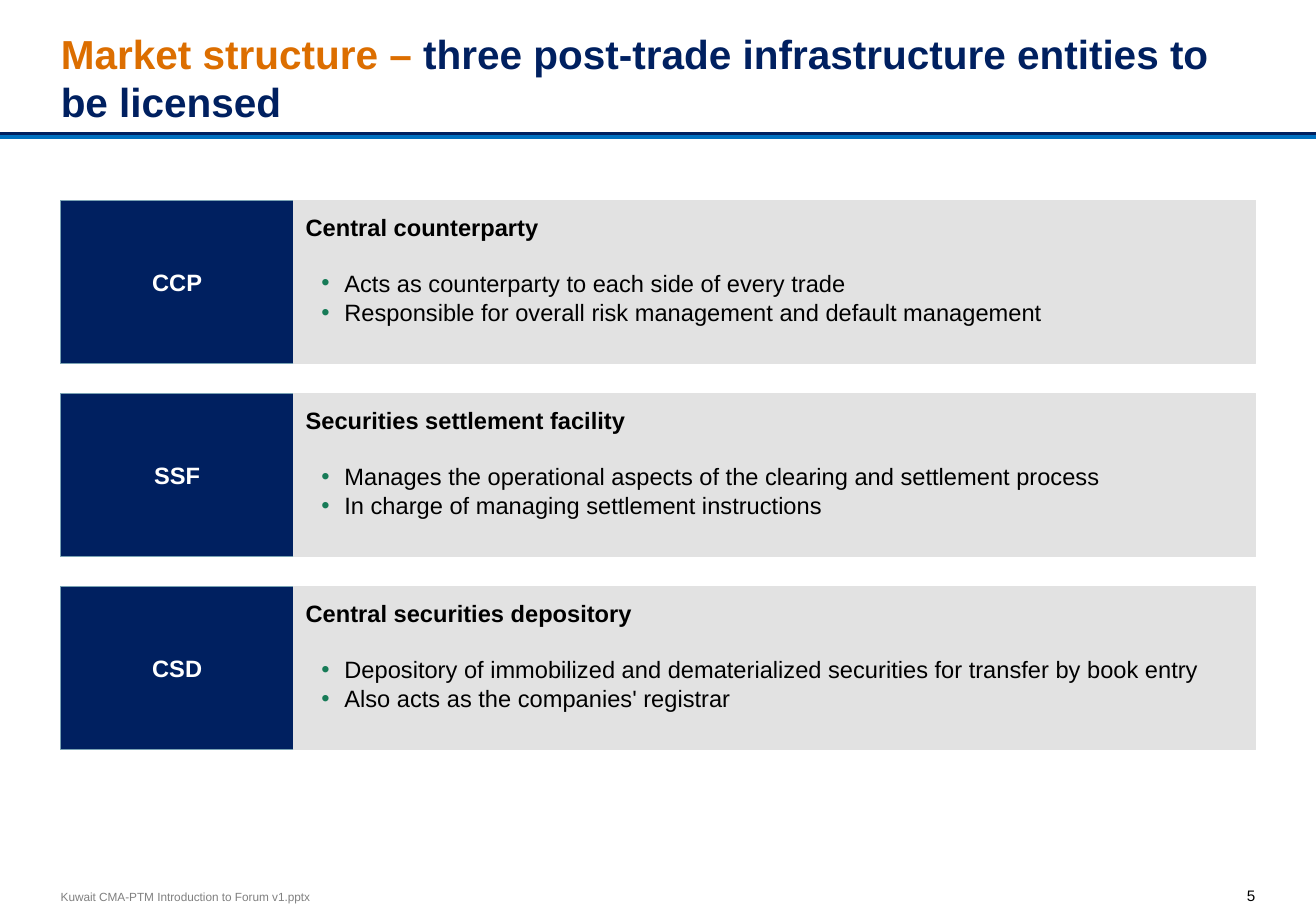
import dataclasses

import lxml.etree
import pptx
import pptx.dml.color
import pptx.enum.shapes
import pptx.enum.text
import pptx.oxml
import pptx.oxml.ns
import pptx.util

Cm = pptx.util.Cm
Pt = pptx.util.Pt
ALIGN = pptx.enum.text.PP_ALIGN
ANCHOR = pptx.enum.text.MSO_ANCHOR


@dataclasses.dataclass(frozen=True)
class Theme:
    font: str = "Arial"
    navy: str = "002060"
    blue: str = "0070C0"
    orange: str = "DC6E00"
    panel: str = "E2E2E2"
    edge: str = "79A2B3"
    bullet: str = "177B57"
    black: str = "000000"
    white: str = "FFFFFF"
    gray: str = "808080"
    title_size: int = 24
    body_size: int = 14
    number_size: int = 9
    footer_size: int = 7


theme = Theme()


def rgb(value):
    return pptx.dml.color.RGBColor.from_string(value)


def write(para, text, size=theme.body_size, color=theme.black, bold=False,
          align=ALIGN.LEFT, bullet=False, before=0):
    para.alignment = align
    if bullet:
        properties = para._p.get_or_add_pPr()
        properties.set("marL", str(Cm(0.81)))
        properties.set("indent", str(-Cm(0.48)))
        mark_color = lxml.etree.SubElement(properties, pptx.oxml.ns.qn("a:buClr"))
        lxml.etree.SubElement(mark_color, pptx.oxml.ns.qn("a:srgbClr"), val=theme.bullet)
        lxml.etree.SubElement(properties, pptx.oxml.ns.qn("a:buFont"), typeface=theme.font)
        lxml.etree.SubElement(properties, pptx.oxml.ns.qn("a:buChar"), char="•")
        para.level = 1
    if before:
        para.space_before = Pt(before)
    span = para.add_run()
    span.text = text
    span.font.name = theme.font
    span.font.size = Pt(size)
    span.font.bold = bold
    span.font.color.rgb = rgb(color)


deck = pptx.Presentation()
deck.slide_width = Cm(27.51)
deck.slide_height = Cm(19.05)
page = deck.slides.add_slide(deck.slide_layouts[5])

left = 1.27
label_width = 4.87
panel_width = 20.11
row_top = 4.19
row_height = 3.41
row_pitch = 4.04

rule = page.shapes.add_connector(
    pptx.enum.shapes.MSO_CONNECTOR.STRAIGHT, Cm(0), Cm(2.79), deck.slide_width, Cm(2.79))
rule.line.color.rgb = rgb(theme.navy)
rule.line.width = Pt(2.25)
effects = lxml.etree.SubElement(rule._element.spPr, pptx.oxml.ns.qn("a:effectLst"))
shadow = lxml.etree.SubElement(
    effects, pptx.oxml.ns.qn("a:outerShdw"), dist=str(Pt(2)), dir="5400000",
    algn="ctr", rotWithShape="0")
lxml.etree.SubElement(shadow, pptx.oxml.ns.qn("a:srgbClr"), val=theme.blue)

title = page.shapes.title
title.left, title.top = Cm(left), Cm(0.45)
title.width, title.height = Cm(24.97), Cm(2.31)
frame = title.text_frame
frame.auto_size = pptx.enum.text.MSO_AUTO_SIZE.NONE
frame.word_wrap = True
frame.vertical_anchor = ANCHOR.BOTTOM
frame.margin_left = frame.margin_right = 0
frame.margin_top = frame.margin_bottom = Cm(0.13)
for text, color in [
    ("Market structure –", theme.orange),
    (" three post-trade infrastructure entities to be licensed", theme.navy),
]:
    write(frame.paragraphs[0], text, size=theme.title_size, color=color, bold=True)

entities = [
    ("CCP", "Central counterparty", [
        "Acts as counterparty to each side of every trade",
        "Responsible for overall risk management and default management"]),
    ("SSF", "Securities settlement facility", [
        "Manages the operational aspects of the clearing and settlement process",
        "In charge of managing settlement instructions"]),
    ("CSD", "Central securities depository", [
        "Depository of immobilized and dematerialized securities for transfer by book entry",
        "Also acts as the companies' registrar"]),
]

for row, (label, heading, duties) in enumerate(entities):
    top = row_top + row * row_pitch
    frames = []
    for start, width, fill, edge, anchor in [
        (left, label_width, theme.navy, theme.edge, ANCHOR.MIDDLE),
        (left + label_width, panel_width, theme.panel, theme.panel, ANCHOR.TOP),
    ]:
        box = page.shapes.add_shape(
            pptx.enum.shapes.MSO_SHAPE.RECTANGLE,
            Cm(start), Cm(top), Cm(width), Cm(row_height))
        box.shadow.inherit = False
        box.fill.solid()
        box.fill.fore_color.rgb = rgb(fill)
        box.line.color.rgb = rgb(edge)
        box.line.width = Pt(0.75)
        frame = box.text_frame
        frame.word_wrap = True
        frame.vertical_anchor = anchor
        frame.margin_left = frame.margin_right = Cm(0.25)
        frame.margin_top = frame.margin_bottom = Cm(0.26)
        frames.append(frame)
    label_frame, description = frames
    write(label_frame.paragraphs[0], label, color=theme.white, bold=True, align=ALIGN.CENTER)
    write(description.paragraphs[0], heading, bold=True)
    for duty, before in zip(duties, (16.3, 0.6)):
        write(description.add_paragraph(), duty, bullet=True, before=before)

for text, start, top, width, height, size, color, align, anchor in [
    ("Kuwait CMA-PTM Introduction to Forum v1.pptx", left, 18.6, 10, 0.3,
     theme.footer_size, theme.gray, ALIGN.LEFT, ANCHOR.MIDDLE),
    ("5", 25.71, 18.54, 0.53, 0.36,
     theme.number_size, theme.black, ALIGN.RIGHT, ANCHOR.TOP),
]:
    box = page.shapes.add_textbox(Cm(start), Cm(top), Cm(width), Cm(height))
    frame = box.text_frame
    frame.word_wrap = True
    frame.vertical_anchor = anchor
    frame.margin_left = frame.margin_right = frame.margin_top = frame.margin_bottom = 0
    write(frame.paragraphs[0], text, size=size, color=color, align=align)

deck.save("out.pptx")
